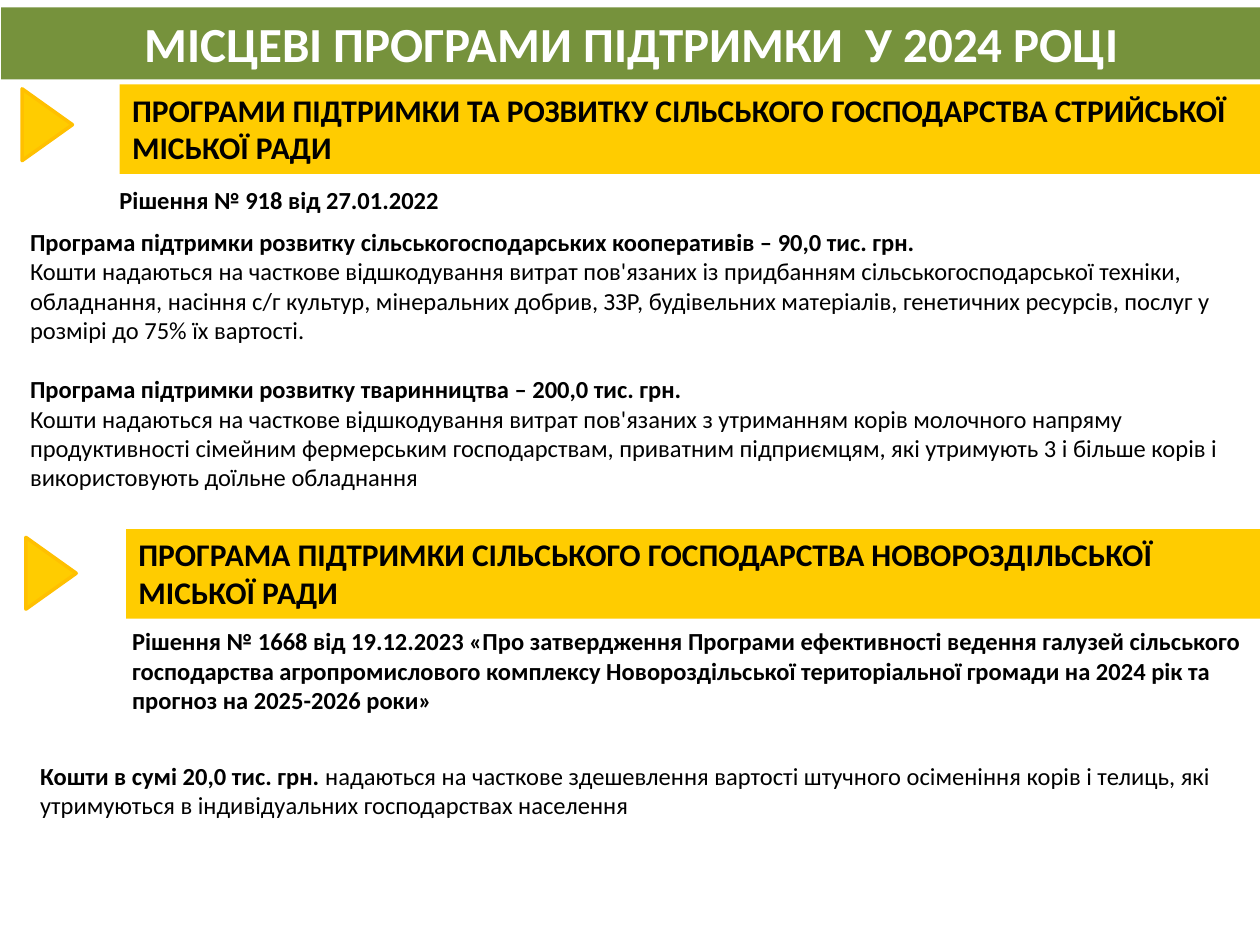
from pptx import Presentation, util as u
from pptx.dml.color import RGBColor
from pptx.enum import shapes, text

deck = Presentation()
deck.slide_width, deck.slide_height = u.Inches(10), u.Inches(7.5)
page = deck.slides.add_slide(deck.slide_layouts[6])
column, row = deck.slide_width / 100, deck.slide_height / 75


def color(value):
    return RGBColor.from_string(value)


def add_block(place, paragraphs, size, fill=None, ink="000000", align=text.PP_ALIGN.LEFT):
    left, top, width, height = place
    frame = [int(n) for n in (left * column, top * row, width * column, height * row)]
    if fill:
        box = page.shapes.add_shape(shapes.MSO_SHAPE.RECTANGLE, *frame)
        box.shadow.inherit = False
        box.fill.solid()
        box.fill.fore_color.rgb = color(fill)
        box.line.fill.background()
    else:
        box = page.shapes.add_textbox(*frame)
    body = box.text_frame
    body.word_wrap = True
    body.vertical_anchor = text.MSO_ANCHOR.TOP
    for index, (gap, spans) in enumerate(paragraphs):
        para = body.add_paragraph() if index else body.paragraphs[0]
        para.alignment = align
        para.space_before = u.Pt(gap)
        para.font.name = "Calibri"
        para.font.size = u.Pt(size)
        para.font.color.rgb = color(ink)
        for words, bold in spans:
            span = para.add_run()
            span.text = words
            span.font.bold = bold


add_block((0.1, 0.6, 100, 5.7), [(0, [("МІСЦЕВІ ПРОГРАМИ ПІДТРИМКИ  У 2024 РОЦІ", True)])],
          28, "76923C", "FFFFFF", text.PP_ALIGN.CENTER)

headings = [
    ((9.5, 6.7, 90.6, 7.1),
     "ПРОГРАМИ ПІДТРИМКИ ТА РОЗВИТКУ СІЛЬСЬКОГО ГОСПОДАРСТВА СТРИЙСЬКОЇ МІСЬКОЇ РАДИ"),
    ((10, 42, 90.2, 7.1),
     "ПРОГРАМА ПІДТРИМКИ СІЛЬСЬКОГО ГОСПОДАРСТВА НОВОРОЗДІЛЬСЬКОЇ МІСЬКОЇ РАДИ"),
]
for place, heading in headings:
    add_block(place, [(0, [(heading, True)])], 18, "FFCC00")

for left, top in [(0.9, 7.9), (1.2, 43.5)]:
    marker = page.shapes.add_shape(shapes.MSO_SHAPE.ISOSCELES_TRIANGLE, int(left * column),
                                   int(top * row), int(5.7 * column), int(4 * row))
    marker.rotation = 90
    marker.shadow.inherit = False
    marker.fill.solid()
    marker.fill.fore_color.rgb = color("FFCC00")
    marker.line.color.rgb = color("FFC000")
    marker.line.width = u.Pt(2)

passages = [
    ((8.5, 14.2, 91.3, 3.4), [(0, [("Рішення № 918 від 27.01.2022", True)])]),
    ((1.4, 17.5, 98, 22.2), [
        (0, [("Програма підтримки розвитку сільськогосподарських кооперативів – 90,0 тис. грн.", True)]),
        (0, [("Кошти надаються на часткове відшкодування витрат пов'язаних із придбанням "
              "сільськогосподарської техніки, обладнання, насіння с/г культур, мінеральних добрив, ЗЗР, "
              "будівельних матеріалів, генетичних ресурсів, послуг у розмірі до 75% їх вартості.", False)]),
        (17, [("Програма підтримки розвитку тваринництва – 200,0 тис. грн.", True)]),
        (0, [("Кошти надаються на часткове відшкодування витрат пов'язаних з утриманням корів молочного "
              "напряму продуктивності сімейним фермерським господарствам, приватним підприємцям, які "
              "утримують 3 і більше корів і використовують доїльне обладнання", False)]),
    ]),
    ((9.5, 49.2, 90.2, 8.1), [
        (0, [("Рішення № 1668 від 19.12.2023 «Про затвердження Програми ефективності ведення галузей "
              "сільського господарства агропромислового комплексу Новороздільської територіальної громади "
              "на 2024 рік та прогноз на 2025-2026 роки»", True)]),
    ]),
    ((2.2, 59.9, 98, 5.7), [
        (0, [("Кошти в сумі 20,0 тис. грн. ", True),
             ("надаються на часткове здешевлення вартості штучного осіменіння корів і телиць, які "
              "утримуються в індивідуальних господарствах населення", False)]),
    ]),
]
for place, paragraphs in passages:
    add_block(place, paragraphs, 14)

deck.save("out.pptx")
